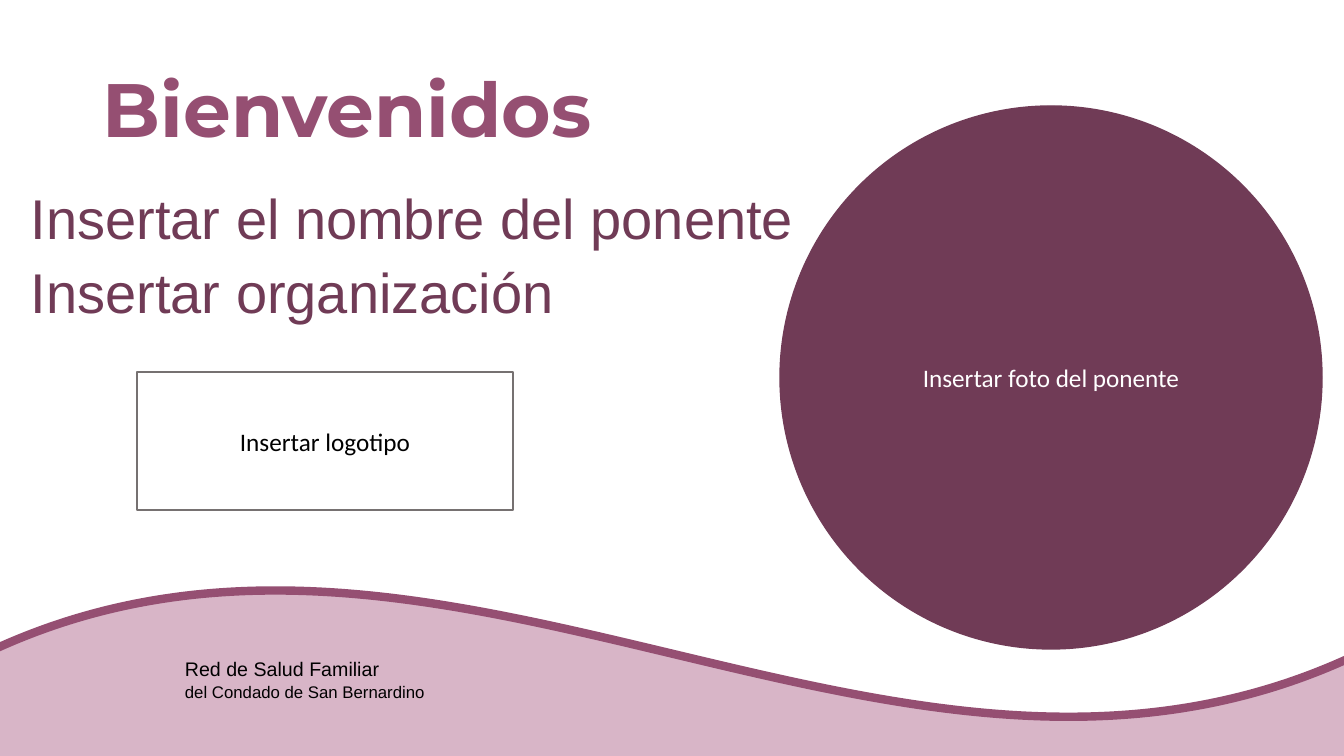
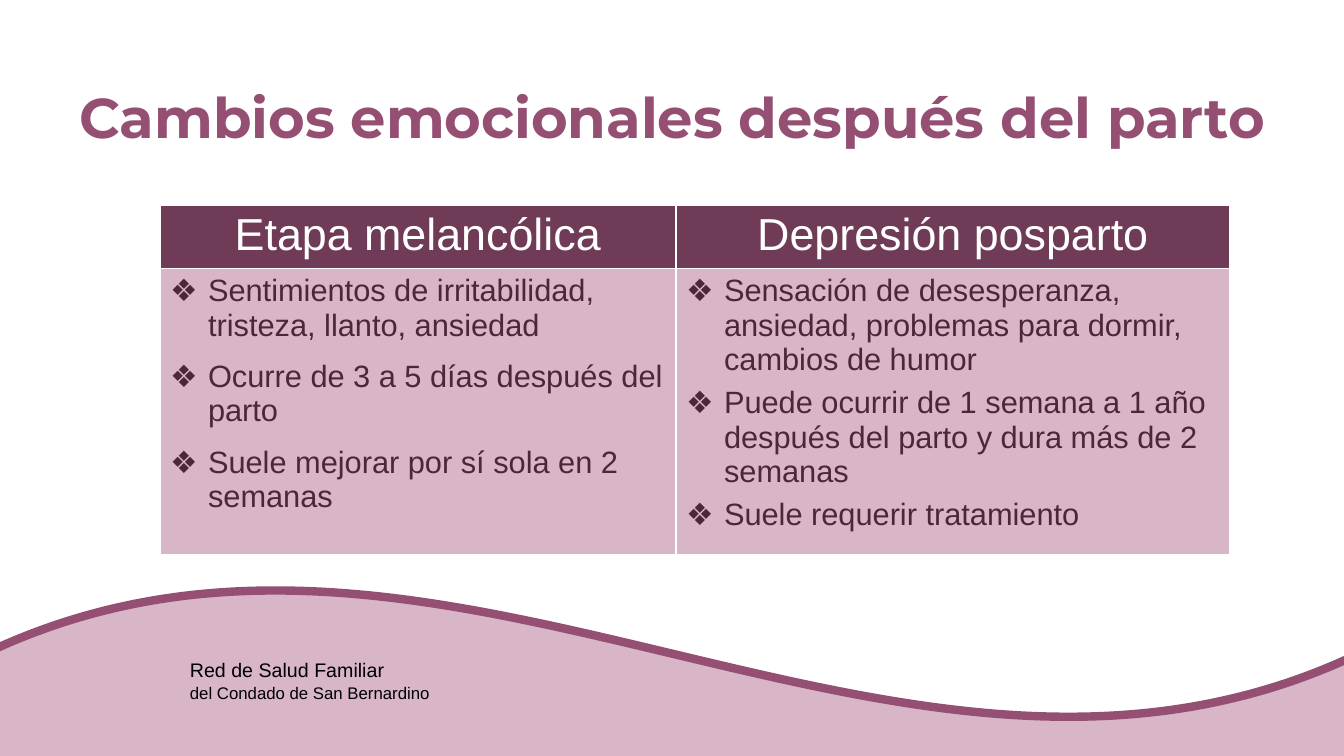
from lxml import etree
from pptx import Presentation, util as u
from pptx.dml.color import RGBColor
from pptx.enum import shapes, text
from pptx.oxml.ns import qn

PX = 9071
PLUM, MAUVE, PINK, INK = "703B56", "954F72", "D8B5C7", "4A2839"
WHITE, BLACK, GRAY = "FFFFFF", "000000", "767171"
SHAPE, ALIGN, ANCHOR = shapes.MSO_SHAPE, text.PP_ALIGN, text.MSO_ANCHOR
rgb = RGBColor.from_string


def add_box(s, kind, at, fill=None, line=None, weight=1):
    at = [n * PX for n in at]
    sp = s.shapes.add_shape(kind, *at) if kind else s.shapes.add_textbox(*at)
    if fill:
        sp.shadow.inherit = False
        sp.fill.solid()
        sp.fill.fore_color.rgb = rgb(fill)
        if line:
            sp.line.color.rgb = rgb(line)
            sp.line.width = u.Pt(weight)
        else:
            sp.line.fill.background()
    sp.text_frame.word_wrap = True
    return sp


def add_text(tf, lines, size, color, font="Arial", bold=False, align=ALIGN.LEFT,
             anchor=ANCHOR.TOP, spacing=1.0, before=0, after=0, bullet=None):
    tf.vertical_anchor = anchor
    for i, line in enumerate(lines):
        p = tf.paragraphs[0] if i == 0 else tf.add_paragraph()
        if bullet:
            pPr = p._p.get_or_add_pPr()
            pPr.set("marL", str(38 * PX))
            pPr.set("indent", str(-38 * PX))
            etree.SubElement(pPr, qn("a:buFont")).set("typeface", "Arial")
            etree.SubElement(pPr, qn("a:buChar")).set("char", bullet)
        p.alignment = align
        p.line_spacing = spacing
        p.space_before = u.Pt(before if i else 0)
        p.space_after = u.Pt(after)
        r = p.add_run()
        r.text = line
        r.font.name = font
        r.font.size = u.Pt(size)
        r.font.bold = bold
        r.font.color.rgb = rgb(color)


prs = Presentation()
prs.slide_width, prs.slide_height = 1344 * PX, 756 * PX

pages = [
    ("Bienvenidos", (93, 40, 1159, 146), 54, ALIGN.LEFT, 0.9, 0, (175, 650)),
    ("Cambios emocionales después del parto", (0, 40, 1344, 146), 40,
     ALIGN.CENTER, 1.1, 12, (180, 651)),
]
for title, at, size, align, spacing, after, corner in pages:
    s = prs.slides.add_slide(prs.slide_layouts[6])
    add_box(s, SHAPE.WAVE, (-15, 588, 1374, 525), PINK, MAUVE, 6)
    add_text(add_box(s, None, at).text_frame, [title], size, MAUVE, "Montserrat", True,
             align, ANCHOR.MIDDLE, spacing, after=after)
    footer = add_box(s, SHAPE.RECTANGLE, (*corner, 299, 53), PINK)
    add_text(footer.text_frame, ["Red de Salud Familiar", "del Condado de San Bernardino"],
             14, BLACK, spacing=1.07)
    footer.text_frame.paragraphs[1].runs[0].font.size = u.Pt(12)

welcome, changes = prs.slides

speaker = add_box(welcome, None, (21, 186, 800, 160))
add_text(speaker.text_frame, ["Insertar el nombre del ponente", "Insertar organización"],
         40, PLUM, spacing=0.9, before=10)

frames = [
    (SHAPE.OVAL, (780, 106, 542, 543), PLUM, PLUM, "Insertar foto del ponente", WHITE),
    (SHAPE.RECTANGLE, (137, 372, 376, 138), WHITE, GRAY, "Insertar logotipo", BLACK),
]
for kind, at, fill, line, label, color in frames:
    sp = add_box(welcome, kind, at, fill, line)
    add_text(sp.text_frame, [label], 18, color, "Calibri",
             align=ALIGN.CENTER, anchor=ANCHOR.MIDDLE)

columns = [
    ("Etapa melancólica", 516, 6, [
        "Sentimientos de irritabilidad, tristeza, llanto, ansiedad",
        "Ocurre de 3 a 5 días después del parto",
        "Suele mejorar por sí sola en 2 semanas",
    ]),
    ("Depresión posparto", 554, 0, [
        "Sensación de desesperanza, ansiedad, problemas para dormir, cambios de humor",
        "Puede ocurrir de 1 semana a 1 año después del parto y dura más de 2 semanas",
        "Suele requerir tratamiento",
    ]),
]
table = changes.shapes.add_table(2, 2, 160 * PX, 205 * PX, 1070 * PX, 335 * PX).table
table.rows[0].height, table.rows[1].height = 59 * PX, 276 * PX
for i, (heading, width, before, items) in enumerate(columns):
    table.columns[i].width = width * PX
    head, body = table.cell(0, i), table.cell(1, i)
    add_text(head.text_frame, [heading], 32, WHITE, align=ALIGN.CENTER)
    add_text(body.text_frame, items, 22, INK, before=before, after=6, bullet="❖")
    for cell, fill in ((head, PLUM), (body, PINK)):
        cell.fill.solid()
        cell.fill.fore_color.rgb = rgb(fill)
        tcPr = cell._tc.get_or_add_tcPr()
        for n, side in enumerate(("lnL", "lnR", "lnT", "lnB")):
            ln = etree.Element(qn("a:" + side), w=str(u.Pt(1)))
            solid = etree.SubElement(ln, qn("a:solidFill"))
            etree.SubElement(solid, qn("a:srgbClr")).set("val", WHITE)
            tcPr.insert(n, ln)

prs.save("out.pptx")
